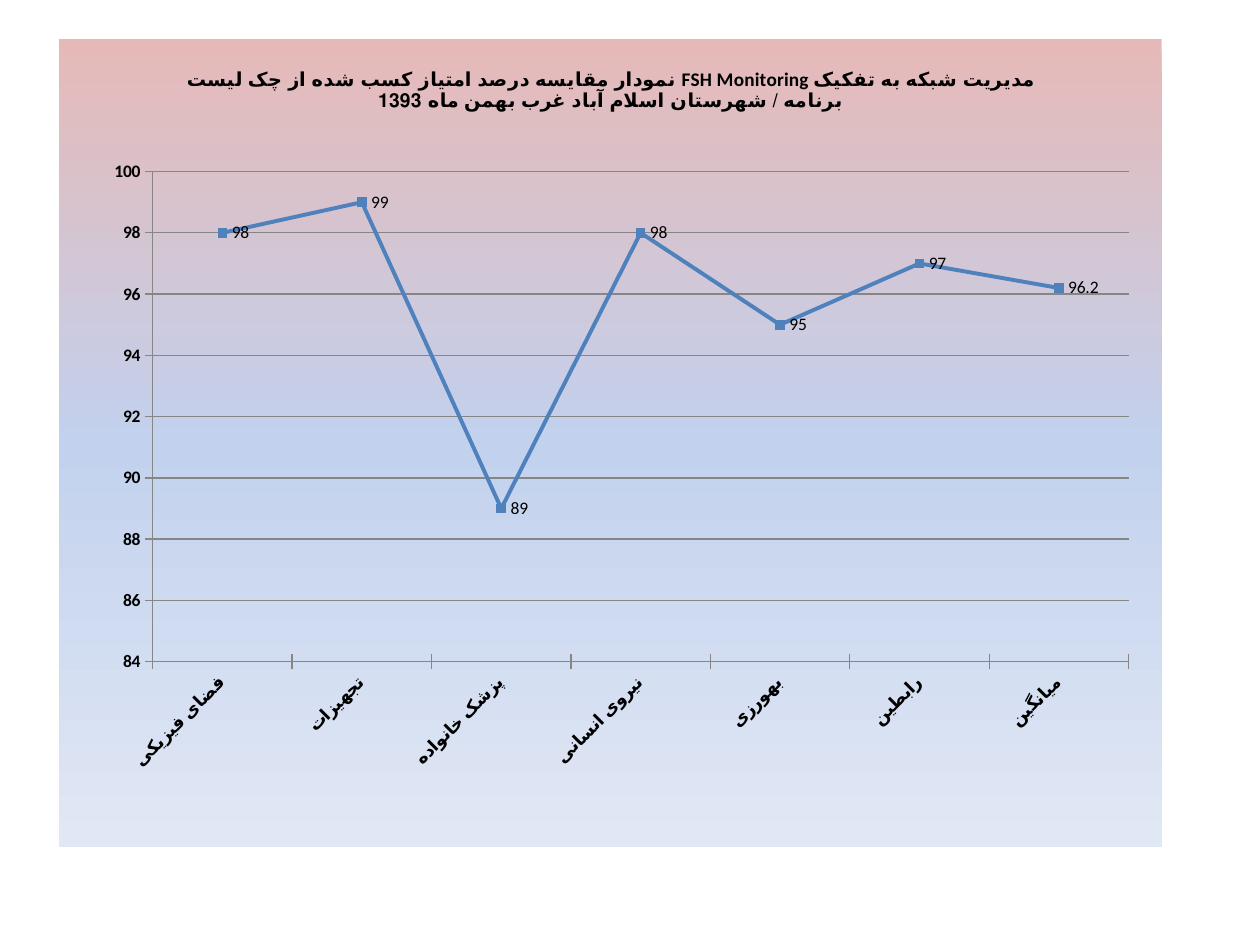
from lxml import etree
from pptx import Presentation
from pptx.chart.data import CategoryChartData
from pptx.dml.color import RGBColor
from pptx.enum.chart import XL_CHART_TYPE, XL_LABEL_POSITION, XL_MARKER_STYLE, XL_TICK_MARK
from pptx.oxml import parse_xml
from pptx.util import Cm, Pt

LINE = XL_CHART_TYPE.LINE_MARKERS
RIGHT = XL_LABEL_POSITION.RIGHT
SQUARE = XL_MARKER_STYLE.SQUARE
CROSS = XL_TICK_MARK.CROSS

FONT = "Calibri"
BLACK, BLUE, GREY = "000000", "4F81BD", "868686"
STOPS = [(0, "E6B9B8"), (50, "C2D1ED"), (100, "E1E8F5")]
PLOT = {"x": 0.085, "y": 0.164, "w": 0.885, "h": 0.607}
TITLE = ("نمودار مقایسه درصد امتیاز کسب شده از چک لیست FSH Monitoring "
         "مدیریت شبکه به تفکیک برنامه / شهرستان اسلام آباد غرب بهمن ماه 1393")
SCORES = {
    "فضای فیزیکی": 98,
    "تجهیزات": 99,
    "پزشک خانواده": 89,
    "نیروی انسانی": 98,
    "بهورزی": 95,
    "رابطین": 97,
    "میانگین": 96.2,
}
C = "http://schemas.openxmlformats.org/drawingml/2006/chart"
A = "http://schemas.openxmlformats.org/drawingml/2006/main"


def color(code):
    return RGBColor.from_string(code)


def style(font, size, bold=False):
    font.name, font.size, font.bold = FONT, Pt(size), bold
    font.color.rgb = color(BLACK)


def shade(chart):
    """Fill the chart area with a vertical gradient."""
    stops = "".join(f'<a:gs pos="{pos * 1000}"><a:srgbClr val="{code}"/></a:gs>'
                    for pos, code in STOPS)
    area = parse_xml(
        f'<c:spPr xmlns:c="{C}" xmlns:a="{A}"><a:gradFill><a:gsLst>{stops}</a:gsLst>'
        '<a:lin ang="5400000" scaled="0"/></a:gradFill><a:ln><a:noFill/></a:ln></c:spPr>')
    chart.element.find(f"{{{C}}}chart").addnext(area)


def place(chart):
    """Fix the inner plot area as fractions of the chart."""
    plot = chart.element.find(f".//{{{C}}}plotArea")
    for old in plot.findall(f"{{{C}}}layout"):
        plot.remove(old)
    layout = etree.Element(f"{{{C}}}layout")
    manual = etree.SubElement(layout, f"{{{C}}}manualLayout")
    parts = {"layoutTarget": "inner", "xMode": "edge", "yMode": "edge", **PLOT}
    for name, val in parts.items():
        etree.SubElement(manual, f"{{{C}}}{name}", val=str(val))
    plot.insert(0, layout)


def score_chart(slide, left, top, width, height):
    data = CategoryChartData()
    data.categories = list(SCORES)
    data.add_series("Series 1", list(SCORES.values()))
    frame = slide.shapes.add_chart(LINE, left, top, width, height, data)
    chart = frame.chart
    style(chart.font, 10)
    chart.has_legend = False
    shade(chart)
    place(chart)

    # Title
    chart.has_title = True
    head = chart.chart_title.text_frame
    head.text = TITLE
    style(head.paragraphs[0].font, 11, True)
    chart.chart_title.include_in_layout = False

    # Axes
    for axis in (chart.category_axis, chart.value_axis):
        style(axis.tick_labels.font, 10, True)
        axis.major_tick_mark = CROSS
        axis.format.line.color.rgb = color(GREY)
    turn = chart.category_axis._element.find(f"{{{C}}}txPr/{{{A}}}bodyPr")
    turn.set("rot", "-2700000")
    scale = chart.value_axis
    scale.minimum_scale, scale.maximum_scale, scale.major_unit = 84, 100, 2
    scale.has_major_gridlines = True
    scale.major_gridlines.format.line.color.rgb = color(GREY)

    # Line, markers and value labels
    plot = chart.plots[0]
    plot.vary_by_categories = False
    line = plot.series[0]
    line.smooth = False
    line.format.line.color.rgb = color(BLUE)
    line.format.line.width = Pt(2.25)
    line.marker.style, line.marker.size = SQUARE, 5
    line.marker.format.fill.solid()
    line.marker.format.fill.fore_color.rgb = color(BLUE)
    line.marker.format.line.color.rgb = color(BLUE)
    labels = line.data_labels
    labels.show_value = True
    labels.position = RIGHT
    style(labels.font, 10)


def main():
    deck = Presentation()
    deck.slide_width, deck.slide_height = Cm(25.4), Cm(19.05)
    slide = deck.slides.add_slide(deck.slide_layouts[6])
    score_chart(slide, Cm(1.19), Cm(0.79), Cm(22.23), Cm(16.28))
    deck.save("out.pptx")


if __name__ == "__main__":
    main()
